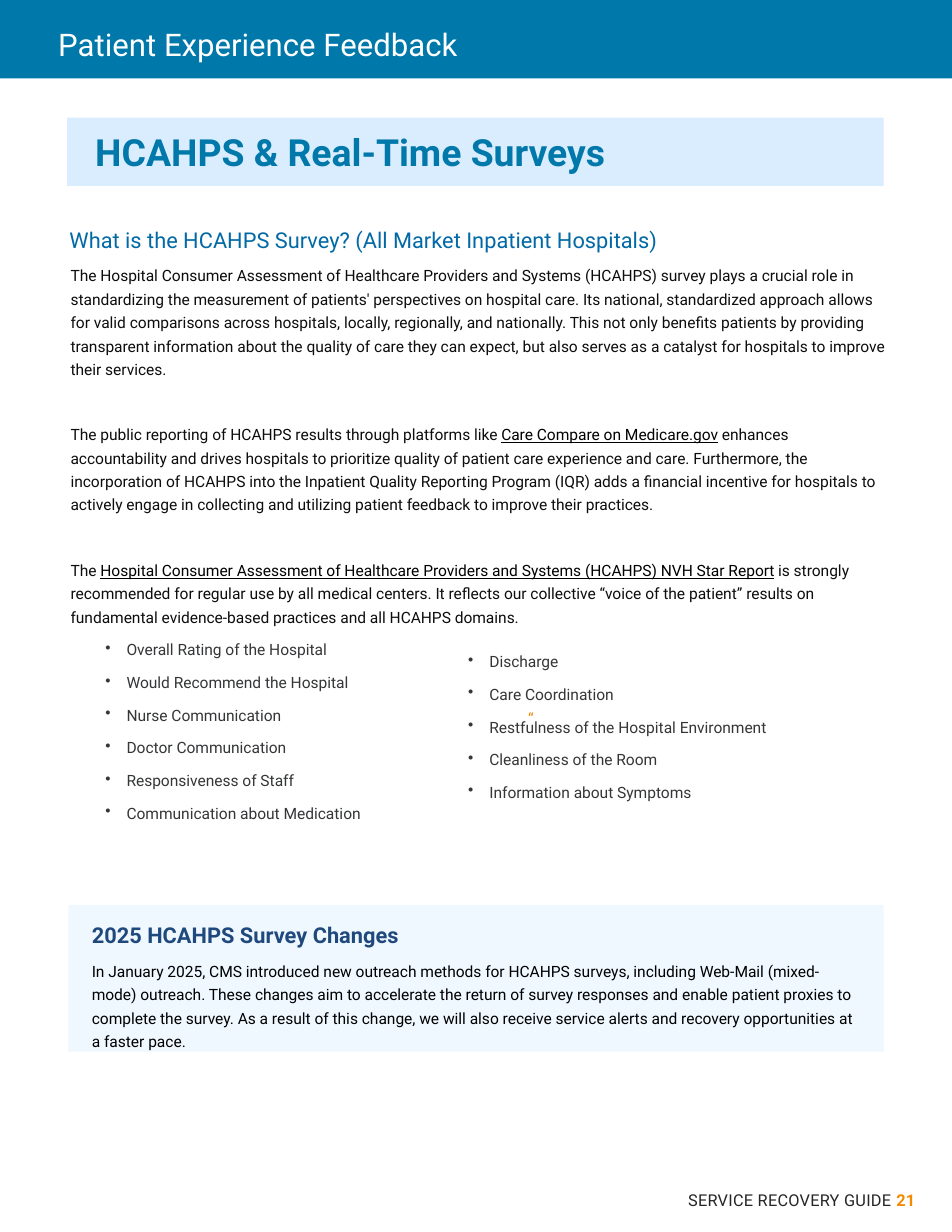
from lxml import etree
from pptx import Presentation
from pptx.dml.color import RGBColor
from pptx.enum.shapes import MSO_SHAPE
from pptx.enum.text import MSO_ANCHOR, PP_ALIGN
from pptx.oxml.ns import qn
from pptx.util import Inches, Pt

RECTANGLE = MSO_SHAPE.RECTANGLE
TOP, MIDDLE = MSO_ANCHOR.TOP, MSO_ANCHOR.MIDDLE
LEFT, CENTER, RIGHT = PP_ALIGN.LEFT, PP_ALIGN.CENTER, PP_ALIGN.RIGHT

BLUE = RGBColor(0x00, 0x78, 0xA9)
HEADING_BLUE = RGBColor(0x00, 0x69, 0xA6)
NAVY = RGBColor(0x1F, 0x49, 0x7D)
PALE_BLUE = RGBColor(0xB4, 0xDC, 0xFF)
ORANGE = RGBColor(0xF3, 0x8B, 0x00)
QUOTE_ORANGE = RGBColor(0xED, 0x8B, 0x00)
WHITE = RGBColor(0xFF, 0xFF, 0xFF)
BLACK = RGBColor(0x00, 0x00, 0x00)
INK = RGBColor(0x0D, 0x0D, 0x0D)
LIST_GRAY = RGBColor(0x35, 0x36, 0x38)
FOOTER_GRAY = RGBColor(0x26, 0x26, 0x26)

FONT = "Roboto"
WIDTH, HEIGHT = 8.5, 11
MARGIN, CONTENT_WIDTH = 0.61, 7.28
LIST_LEFT = 3.86
SECTION_GAP = 27

# Content
PAGE_TITLE = "Patient Experience Feedback"
BANNER = "HCAHPS & Real-Time Surveys"
QUESTION = "What is the HCAHPS Survey? (All Market Inpatient Hospitals)"
# Each paragraph is a list of (text, underlined)
BODY = [
    [("The Hospital Consumer Assessment of Healthcare Providers and Systems (HCAHPS) survey plays a "
      "crucial role in standardizing the measurement of patients' perspectives on hospital care. Its "
      "national, standardized approach allows for valid comparisons across hospitals, locally, "
      "regionally, and nationally. This not only benefits patients by providing transparent "
      "information about the quality of care they can expect, but also serves as a catalyst for "
      "hospitals to improve their services.", False)],
    [("The public reporting of HCAHPS results through platforms like ", False),
     ("Care Compare on Medicare.gov", True),
     (" enhances accountability and drives hospitals to prioritize quality of patient care experience "
      "and care. Furthermore, the incorporation of HCAHPS into the Inpatient Quality Reporting Program "
      "(IQR) adds a financial incentive for hospitals to actively engage in collecting and utilizing "
      "patient feedback to improve their practices.", False)],
    [("The ", False),
     ("Hospital Consumer Assessment of Healthcare Providers and Systems (HCAHPS) NVH Star Report", True),
     (" is strongly recommended for regular use by all medical centers. It reflects our collective "
      "“voice of the patient” results on fundamental evidence-based practices and all HCAHPS domains.",
      False)],
]
LEFT_LIST = ["Overall Rating of the Hospital", "Would Recommend the Hospital", "Nurse Communication",
             "Doctor Communication", "Responsiveness of Staff", "Communication about Medication"]
RIGHT_LIST = ["Discharge", "Care Coordination", "Restfulness of the Hospital Environment",
              "Cleanliness of the Room", "Information about Symptoms"]
CHANGES_TITLE = "2025 HCAHPS Survey Changes"
CHANGES_TEXT = (
    "In January 2025, CMS introduced new outreach methods for HCAHPS surveys, including Web-Mail "
    "(mixed-mode) outreach. These changes aim to accelerate the return of survey responses and enable "
    "patient proxies to complete the survey. As a result of this change, we will also receive service "
    "alerts and recovery opportunities at a faster pace.")
FOOTER, PAGE_NUMBER = "SERVICE RECOVERY GUIDE ", "21"
QUOTE_MARK = "“"


def set_frame(shape, insets=(0, 0, 0, 0), anchor=TOP):
    frame = shape.text_frame
    frame.word_wrap = True
    frame.vertical_anchor = anchor
    (frame.margin_left, frame.margin_top,
     frame.margin_right, frame.margin_bottom) = [Inches(inset) for inset in insets]
    return frame


def add_box(slide, left, top, width, height, **layout):
    shape = slide.shapes.add_textbox(Inches(left), Inches(top), Inches(width), Inches(height))
    return set_frame(shape, **layout)


def add_panel(slide, left, top, width, height, color, opacity=100, **layout):
    shape = slide.shapes.add_shape(RECTANGLE, Inches(left), Inches(top), Inches(width), Inches(height))
    shape.shadow.inherit = False
    shape.line.fill.background()
    shape.fill.solid()
    shape.fill.fore_color.rgb = color
    if opacity < 100:
        color_element = shape.fill._xPr.find(".//" + qn("a:srgbClr"))
        etree.SubElement(color_element, qn("a:alpha")).set("val", str(opacity * 1000))
    return set_frame(shape, **layout)


def add_text(frame, text, size=10, color=INK, bold=False, underline=False, paragraph=None,
             before=0, line=1.0, align=LEFT, indent=0, hanging=0, bullet=None):
    """Write a run, in a given paragraph or in a new one with its own format."""
    if paragraph is None:
        first = frame.paragraphs[0]
        paragraph = frame.add_paragraph() if first.runs else first
        properties = paragraph._p.get_or_add_pPr()
        properties.set("marL", str(Inches(indent)))
        properties.set("indent", str(-Inches(hanging)))
        if bullet:
            etree.SubElement(properties, qn("a:buChar")).set("char", bullet)
        paragraph.alignment = align
        paragraph.line_spacing = line
        paragraph.space_before = Pt(before)
    run = paragraph.add_run()
    run.text = text
    run.font.name, run.font.size = FONT, Pt(size)
    run.font.bold, run.font.underline = bold, underline
    run.font.color.rgb = color
    return paragraph


def add_list(frame, items, first_before):
    for number, item in enumerate(items):
        add_text(frame, item, color=LIST_GRAY, line=1.25, before=6 if number else first_before,
                 indent=0.51, hanging=0.19, bullet="•")


def main():
    presentation = Presentation()
    presentation.slide_width, presentation.slide_height = Inches(WIDTH), Inches(HEIGHT)
    slide = presentation.slides.add_slide(presentation.slide_layouts[6])

    # Header band and footer
    add_panel(slide, 0, 0, WIDTH, 0.7, BLUE)
    footer = add_box(slide, 0.25, 10.57, 8.02, 0.28, insets=(0.1, 0.06, 0.1, 0.05))
    label = add_text(footer, FOOTER, size=10.5, color=FOOTER_GRAY, align=RIGHT)
    add_text(footer, PAGE_NUMBER, size=10.5, color=ORANGE, bold=True, paragraph=label)
    for run in label.runs:
        run.font._element.set("spc", "20")

    # Survey description and left list
    body = add_box(slide, MARGIN + 0.01, 2, CONTENT_WIDTH, 5.38, insets=(0, 0.02, 0, 0))
    add_text(body, QUESTION, size=14, color=HEADING_BLUE)
    for number, parts in enumerate(BODY):
        paragraph = None
        for text, linked in parts:
            paragraph = add_text(body, text, color=BLACK if linked else INK, underline=linked,
                                 paragraph=paragraph, line=1.25, indent=0.01,
                                 before=SECTION_GAP if number else 6)
    add_list(body, LEFT_LIST, first_before=6)

    # Quote mark
    quote = add_box(slide, 4.55, 6.28, 0.38, 0.27, insets=(0.1, 0.05, 0.1, 0.05))
    add_text(quote, QUOTE_MARK, color=QUOTE_ORANGE, align=CENTER)

    # Survey changes panel
    changes = add_panel(slide, MARGIN, 8.08, CONTENT_WIDTH, 1.31, PALE_BLUE, opacity=20,
                        insets=(0.2, 0.18, 0.2, 0.1), anchor=MIDDLE)
    add_text(changes, CHANGES_TITLE, size=14, color=NAVY, bold=True, line=1.25, indent=0.01)
    add_text(changes, CHANGES_TEXT, color=BLACK, line=1.25, before=6, indent=0.01)

    # Page title and banner
    title = add_box(slide, 0.52, 0.22, 7.48, 0.34, anchor=MIDDLE)
    add_text(title, PAGE_TITLE, size=20, color=WHITE)
    banner = add_panel(slide, MARGIN - 0.01, 1.05, CONTENT_WIDTH + 0.01, 0.61, PALE_BLUE, opacity=50,
                       insets=(0.25, 0.1, 0, 0.1), anchor=MIDDLE)
    add_text(banner, BANNER, size=24, color=BLUE, bold=True)

    # Right list
    right_list = add_box(slide, LIST_LEFT, 5.69, 3.41, 1.4, insets=(0, 0.09, 0, 0))
    add_list(right_list, RIGHT_LIST, first_before=0)

    presentation.save("out.pptx")


if __name__ == "__main__":
    main()
